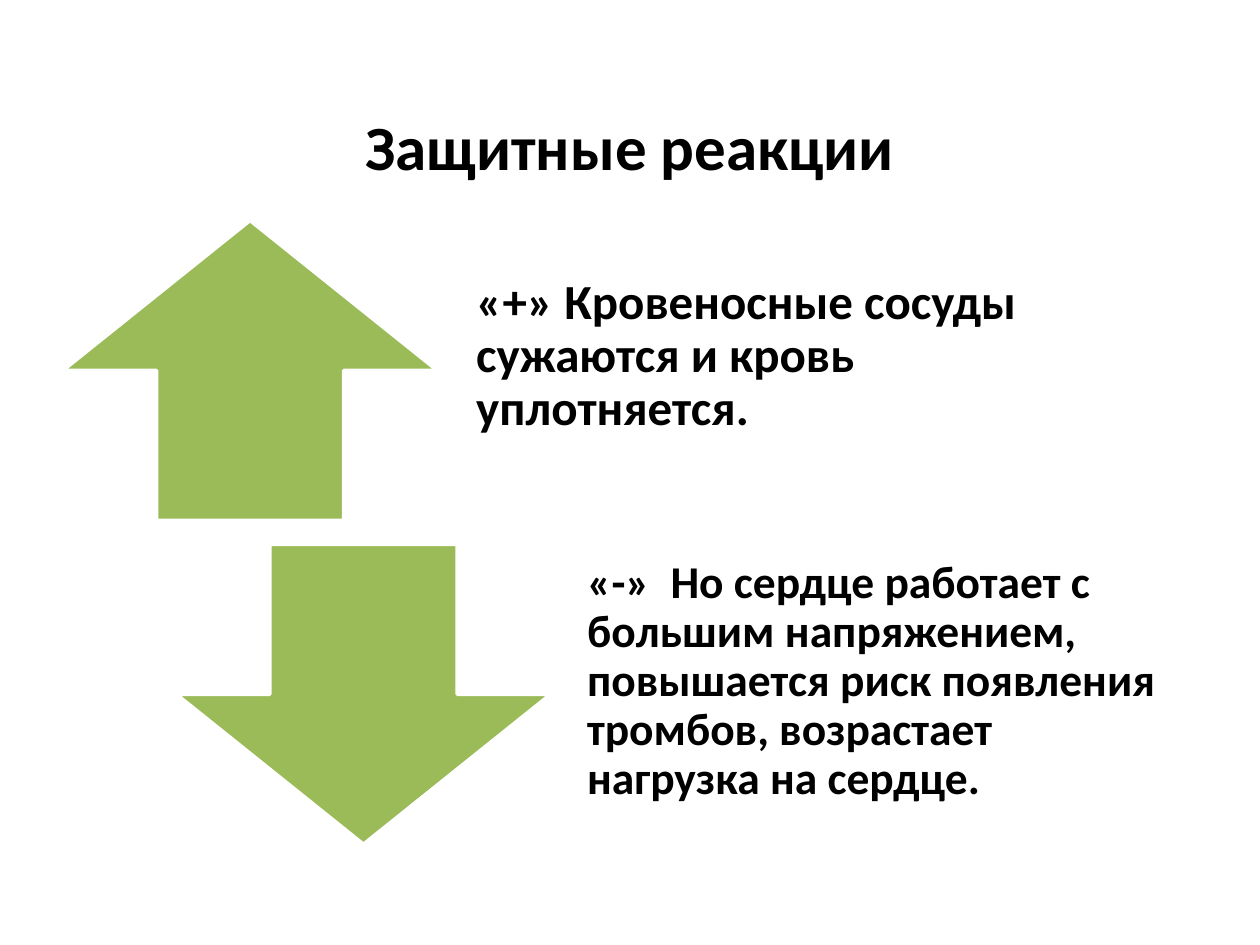
from dataclasses import dataclass

from pptx import Presentation
from pptx.dml.color import RGBColor
from pptx.enum.shapes import MSO_SHAPE as Shape
from pptx.enum.text import MSO_ANCHOR as Anchor, PP_ALIGN as Align
from pptx.util import Emu, Pt

PX = 9144  # EMU per px, 100 px to the inch


@dataclass(frozen=True)
class Theme:
    font: str = "Calibri"
    ink: RGBColor = RGBColor(0x00, 0x00, 0x00)
    arrow: RGBColor = RGBColor(0x9B, 0xBB, 0x59)
    outline: RGBColor = RGBColor(0xFF, 0xFF, 0xFF)
    title_size: int = 36
    plus_size: int = 28
    minus_size: int = 26


THEME = Theme()


def px(length):
    return Emu(length * PX)


def add_text(shapes, box, wording, size, inset, align=Align.LEFT, spacing=1.0):
    frame = shapes.add_textbox(*map(px, box)).text_frame
    frame.word_wrap = True
    frame.vertical_anchor = Anchor.MIDDLE
    frame.margin_left, frame.margin_top, frame.margin_right, frame.margin_bottom = map(px, inset)
    paragraph = frame.paragraphs[0]
    paragraph.text = wording
    paragraph.alignment = align
    paragraph.line_spacing = spacing
    font = paragraph.font
    font.name, font.size, font.bold = THEME.font, Pt(size), True
    font.color.rgb = THEME.ink


def add_title(slide, box):
    add_text(slide.shapes, box, "Защитные реакции", THEME.title_size,
             (10, 5, 10, 5), Align.CENTER)


def add_reaction(shapes, box, direction, wording, size, inset):
    """An arrow at the left of the box, its explanation at the right."""
    left, top, width, height = box
    arrow_width, gap = 297, 9

    # Arrow
    arrow = shapes.add_shape(direction, *map(px, (left, top, arrow_width, height)))
    arrow.shadow.inherit = False
    arrow.fill.solid()
    arrow.fill.fore_color.rgb = THEME.arrow
    arrow.line.color.rgb = THEME.outline
    arrow.line.width = Pt(2)

    # Explanation
    offset = arrow_width + gap
    add_text(shapes, (left + offset, top, width - offset, height), wording, size,
             (inset, 0, inset, inset), spacing=0.9)


def add_reactions(slide, box):
    """Two reactions stepping down from the top left to the bottom right."""
    left, top, width, height = box
    row_width, row_height = 810, 238
    reactions = [
        (Shape.UP_ARROW, "«+» Кровеносные сосуды сужаются и кровь уплотняется.",
         THEME.plus_size, 22),
        (Shape.DOWN_ARROW, "«-»  Но сердце работает с большим напряжением, "
         "повышается риск появления тромбов, возрастает нагрузка на сердце.",
         THEME.minus_size, 20),
    ]
    group = slide.shapes.add_group_shape()
    for row, reaction in enumerate(reactions):
        row_box = (left + row * (width - row_width),
                   top + row * (height - row_height), row_width, row_height)
        add_reaction(group.shapes, row_box, *reaction)


def main():
    deck = Presentation()
    deck.slide_width, deck.slide_height = px(1000), px(750)
    slide = deck.slides.add_slide(deck.slide_layouts[6])
    add_title(slide, (50, 76, 900, 79))
    add_reactions(slide, (50, 175, 900, 495))
    deck.save("out.pptx")


if __name__ == "__main__":
    main()
